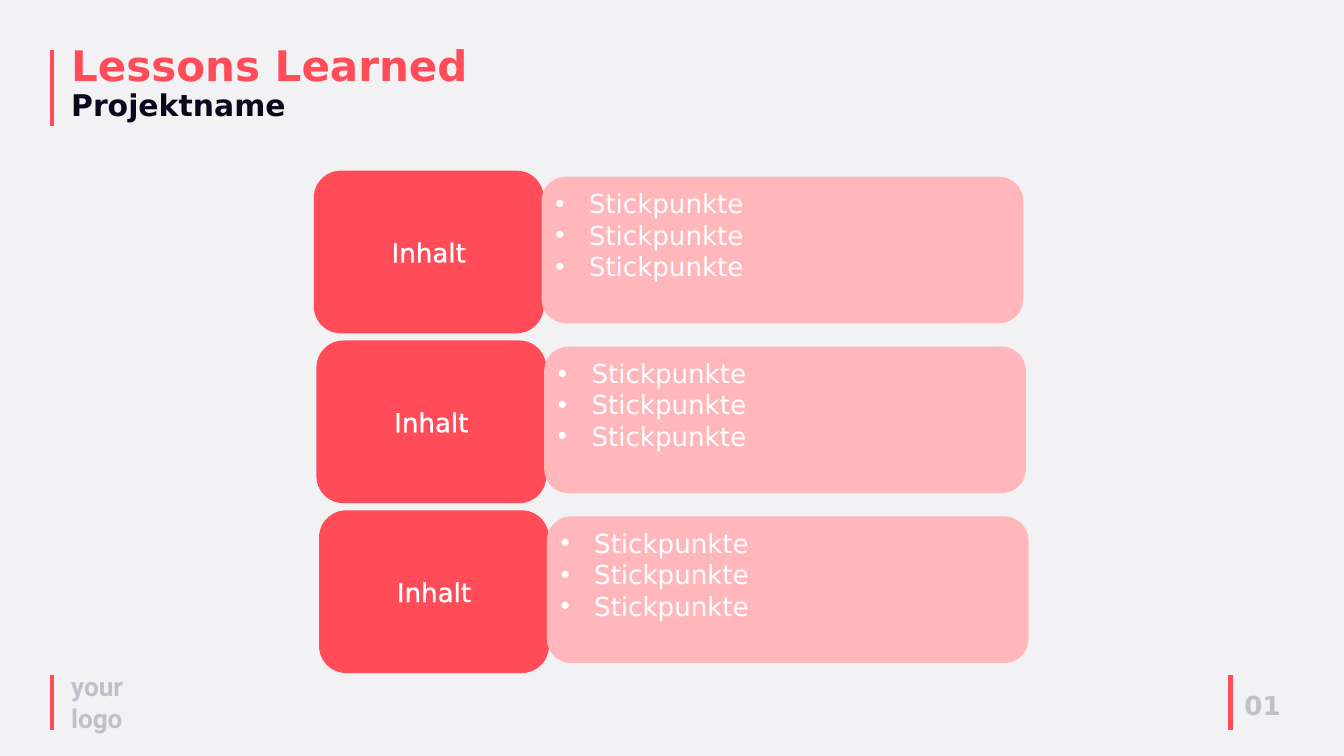
from lxml import etree
from pptx import Presentation
from pptx.dml.color import RGBColor
from pptx.enum.shapes import MSO_CONNECTOR as Connector, MSO_SHAPE as Shape
from pptx.enum.text import MSO_ANCHOR as Anchor, MSO_AUTO_SIZE as AutoSize, PP_ALIGN as Align
from pptx.oxml import parse_xml
from pptx.oxml.ns import nsdecls, qn
from pptx.util import Cm, Pt

RED = RGBColor(0xFF, 0x4C, 0x58)
PINK = RGBColor(0xFF, 0xB7, 0xBC)
NAVY = RGBColor(0x0A, 0x09, 0x1B)
GRAY = RGBColor(0xC0, 0xC0, 0xC8)
WHITE = RGBColor(0xFF, 0xFF, 0xFF)
BACKGROUND = RGBColor(0xF2, 0xF2, 0xF5)
FONT = "DejaVu Sans"
LOGO_FONT = "Roboto"


def add_span(para, text, color, size=28, bold=False, font=FONT):
    span = para.add_run()
    span.text = text
    span.font.name = font
    span.font.size = Pt(size)
    span.font.bold = bold
    span.font.color.rgb = color
    return span


def add_text_box(page, left, top, width, height):
    box = page.shapes.add_textbox(Cm(left), Cm(top), Cm(width), Cm(height))
    box.text_frame.word_wrap = True
    box.text_frame.auto_size = AutoSize.SHAPE_TO_FIT_TEXT
    return box.text_frame.paragraphs[0]


def add_bar(page, left, top, height):
    bar = page.shapes.add_connector(
        Connector.STRAIGHT, Cm(left), Cm(top), Cm(left), Cm(top + height))
    bar.line.color.rgb = RED
    bar.line.width = Pt(5)
    etree.SubElement(bar.element.spPr, qn("a:effectLst"))


def add_card(page, left, top, width, height, color):
    card = page.shapes.add_shape(
        Shape.ROUNDED_RECTANGLE, Cm(left), Cm(top), Cm(width), Cm(height))
    card.shadow.inherit = False
    card.fill.solid()
    card.fill.fore_color.rgb = color
    card.line.fill.background()
    card.text_frame.word_wrap = True
    return card.text_frame


def outline_text(span, color):
    span.font._element.insert(0, parse_xml(
        f'<a:ln {nsdecls("a")} w="{Pt(0.75)}"><a:solidFill>'
        f'<a:srgbClr val="{color}"/></a:solidFill></a:ln>'))


def add_bullet(para):
    props = para._p.get_or_add_pPr()
    props.set("marL", str(Cm(1.27)))
    props.set("indent", str(-Cm(1.27)))
    etree.SubElement(props, qn("a:buFont"), typeface="Arial")
    etree.SubElement(props, qn("a:buChar"), char="•")


def add_header(page, left, top):
    add_bar(page, left, top, 2.87)
    para = add_text_box(page, left + 0.48, top - 0.33, 25.3, 3.23)
    para.line_spacing = 0.9
    add_span(para, "Lessons Learned", RED, 45, True)
    para.add_line_break()
    add_span(para, "Projektname", NAVY, 32, True)


def add_lesson(page, left, top, label, points):
    frame = add_card(page, left, top, 8.69, 6.15, RED)
    frame.vertical_anchor = Anchor.MIDDLE
    para = frame.paragraphs[0]
    para.alignment = Align.CENTER
    outline_text(add_span(para, label, WHITE), WHITE)

    frame = add_card(page, left + 8.61, top + 0.23, 18.21, 5.54, PINK)
    frame.vertical_anchor = Anchor.TOP
    frame.margin_top = Cm(0.14)
    for index, point in enumerate(points):
        para = frame.add_paragraph() if index else frame.paragraphs[0]
        para.alignment = Align.LEFT
        add_bullet(para)
        add_span(para, point, WHITE)


def add_footer(page, left, right, top):
    for bar_left in (left, right):
        add_bar(page, bar_left, top, 2.06)
    logo = add_text_box(page, left + 0.48, top - 0.31, 3.02, 2.64)
    add_span(logo, "your logo", GRAY, bold=True, font=LOGO_FONT)
    number = add_text_box(page, right + 0.28, top + 0.4, 4.83, 1.45)
    add_span(number, "01", GRAY, bold=True)


def main():
    deck = Presentation()
    deck.slide_width = Cm(50.8)
    deck.slide_height = Cm(50.8 * 9 / 16)
    page = deck.slides.add_slide(deck.slide_layouts[6])
    page.background.fill.solid()
    page.background.fill.fore_color.rgb = BACKGROUND

    add_header(page, 1.96, 1.9)
    for row in range(3):
        add_lesson(page, 11.86 + 0.1 * row, 6.45 + 6.42 * row,
                   "Inhalt", ["Stickpunkte"] * 3)
    add_footer(page, 1.96, 46.51, 25.53)
    deck.save("out.pptx")


if __name__ == "__main__":
    main()
